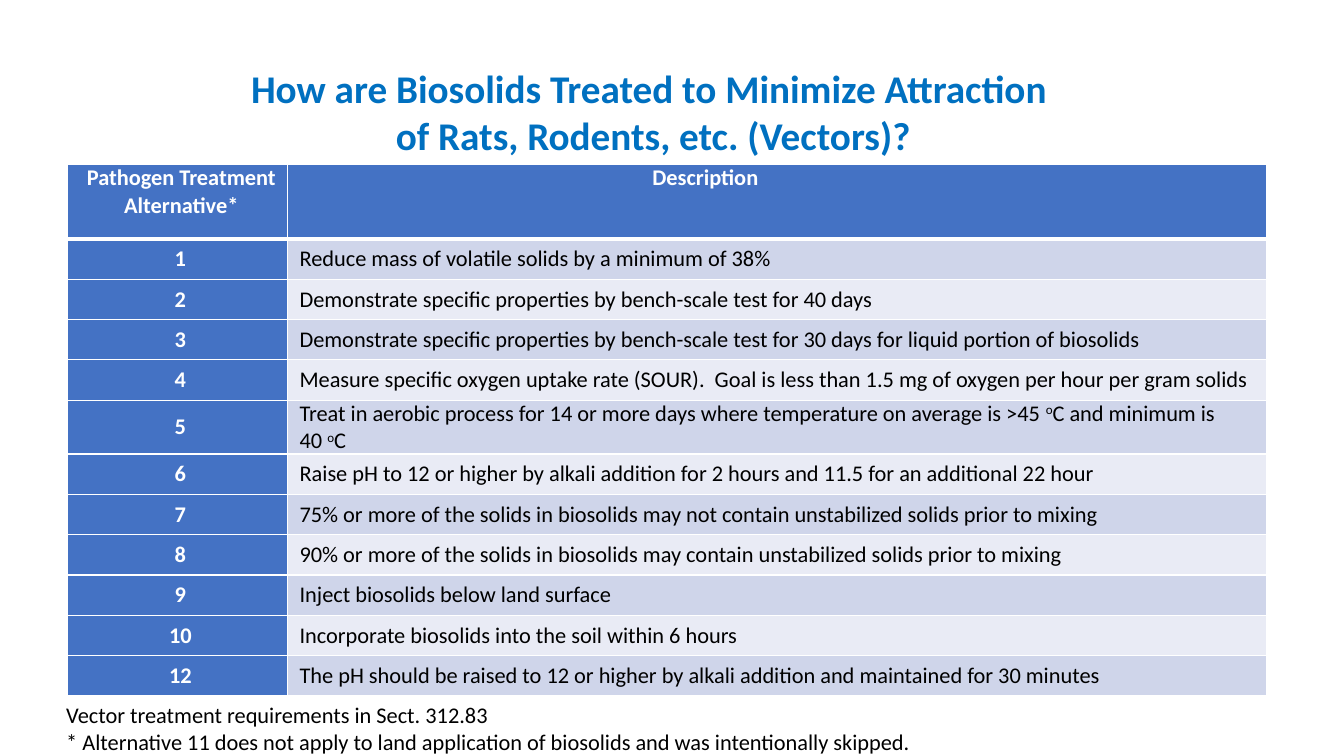
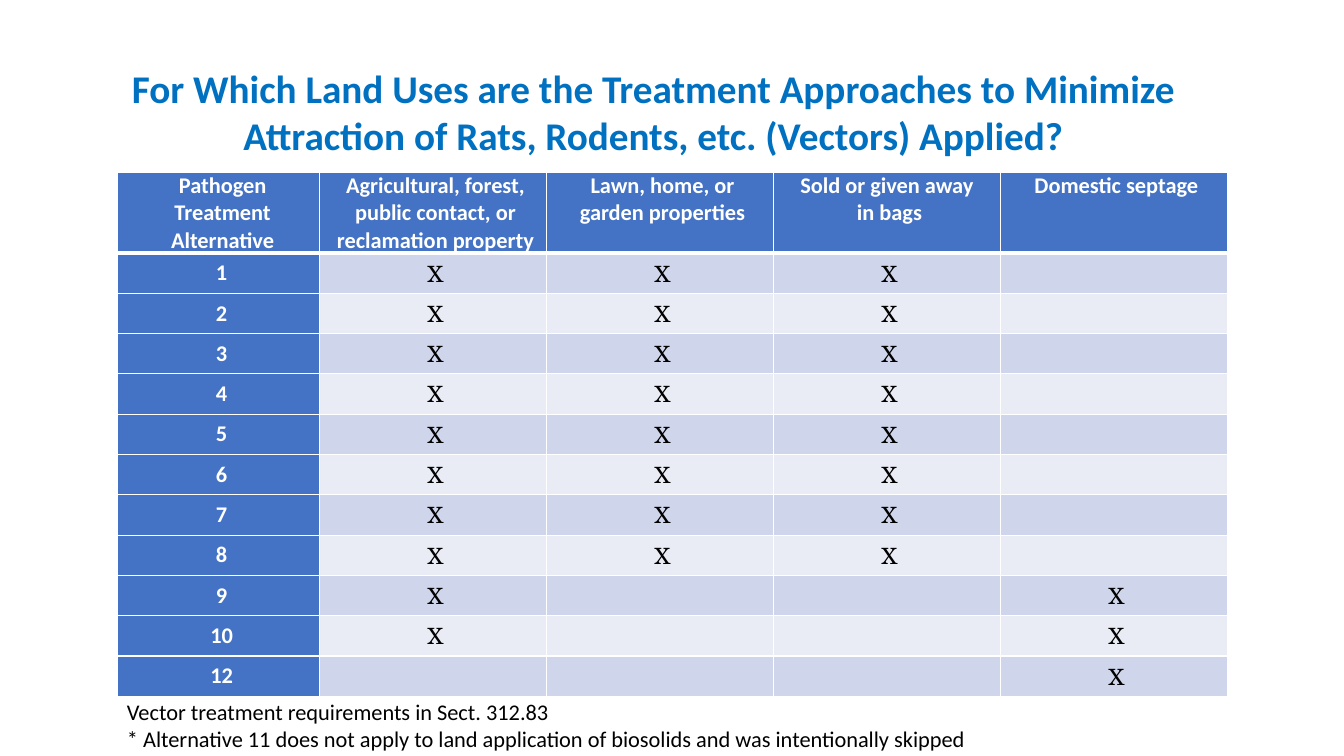
from dataclasses import dataclass

from lxml.etree import SubElement
from pptx import Presentation
from pptx.dml.color import RGBColor
from pptx.enum.text import MSO_ANCHOR, MSO_AUTO_SIZE, PP_ALIGN
from pptx.oxml.ns import qn
from pptx.slide import Slide
from pptx.table import _Cell
from pptx.text.text import TextFrame
from pptx.util import Cm, Pt


# Theme
@dataclass(frozen=True)
class Theme:
    title: str = "0070C0"
    header: str = "4472C4"
    bands: tuple[str, str] = ("CFD5EA", "E9EBF5")
    light: str = "FFFFFF"
    dark: str = "000000"
    font: str = "Calibri"
    mark_font: str = "TeX Gyre Schola"
    title_size: int = 28
    body_size: int = 16
    thin_line: int = 1
    thick_line: int = 3


THEME = Theme()
TITLE_BOX = (2.64, 1.5, 27.64, 2.64)
NOTE_SIZE = (26.7, 1.63)
HEADER_HEIGHT, BODY_HEIGHT = 1.88, 11.18
CELL_INSET = 0.18
HEADER_INDENT, NUMBER_INDENT, BODY_INDENT = 0.2, 0.15, 0.13


@dataclass(frozen=True)
class TableSlide:
    title: str
    note: str
    headers: list[str]
    rows: list[list[str]]
    widths: list[float]
    table_at: tuple[float, float]
    note_at: tuple[float, float]
    body_font: str
    body_align: PP_ALIGN
    last_header_indent: float
    last_header_align: PP_ALIGN


# Content
ALTERNATIVES = [*range(1, 11), 12]
DESCRIPTIONS = [
    "Reduce mass of volatile solids by a minimum of 38%",
    "Demonstrate specific properties by bench-scale test for 40 days",
    "Demonstrate specific properties by bench-scale test for 30 days for liquid portion of biosolids",
    "Measure specific oxygen uptake rate (SOUR).  Goal is less than 1.5 mg of oxygen per hour per gram solids",
    "Treat in aerobic process for 14 or more days where temperature on average is >45 ^o^C and minimum is \v40 ^o^C",
    "Raise pH to 12 or higher by alkali addition for 2 hours and 11.5 for an additional 22 hour",
    "75% or more of the solids in biosolids may not contain unstabilized solids prior to mixing",
    "90% or more of the solids in biosolids may contain unstabilized solids prior to mixing",
    "Inject biosolids below land surface",
    "Incorporate biosolids into the soil within 6 hours",
    "The pH should be raised to 12 or higher by alkali addition and maintained for 30 minutes",
]
# Alternatives that apply to each land use, in column order
LAND_USES = [range(1, 11), range(1, 9), range(1, 9), range(9, 13)]
NOTE = ("Vector treatment requirements in Sect. 312.83\n"
        "* Alternative 11 does not apply to land application of biosolids and was intentionally skipped")

SLIDES = [
    TableSlide(
        title="How are Biosolids Treated to Minimize Attraction \vof Rats, Rodents, etc. (Vectors)?",
        note=NOTE + ".",
        headers=["Pathogen Treatment Alternative*", "Description"],
        rows=[[str(number), text] for number, text in zip(ALTERNATIVES, DESCRIPTIONS)],
        widths=[5.54, 24.69],
        table_at=(1.7, 4.14),
        note_at=(1.42, 17.55),
        body_font=THEME.font,
        body_align=PP_ALIGN.LEFT,
        last_header_indent=9.02,
        last_header_align=PP_ALIGN.LEFT,
    ),
    TableSlide(
        title="For Which Land Uses are the Treatment Approaches to Minimize "
              "Attraction of Rats, Rodents, etc. (Vectors) Applied?",
        note=NOTE,
        headers=["Pathogen Treatment Alternative",
                 "Agricultural, forest, public contact, or reclamation property",
                 "Lawn, home, or garden properties",
                 "Sold or given away \vin bags",
                 "Domestic septage"],
        rows=[[str(number), *("X" if number in use else "" for use in LAND_USES)]
              for number in ALTERNATIVES],
        widths=[5.08] + [5.72] * 4,
        table_at=(2.97, 4.34),
        note_at=(2.95, 17.48),
        body_font=THEME.mark_font,
        body_align=PP_ALIGN.CENTER,
        last_header_indent=BODY_INDENT,
        last_header_align=PP_ALIGN.CENTER,
    ),
]


# Text: \n starts a paragraph, \v breaks a line, ^...^ is superscript
def write_text(frame: TextFrame, text: str, *, size: int = THEME.body_size,
               color: str = THEME.dark, font: str = THEME.font, bold: bool = False,
               align: PP_ALIGN = PP_ALIGN.LEFT, indent: float = 0) -> None:
    frame.word_wrap = True
    for index, paragraph_text in enumerate(text.split("\n")):
        paragraph = frame.add_paragraph() if index else frame.paragraphs[0]
        paragraph.alignment = align
        properties = paragraph._p.get_or_add_pPr()
        properties.set("marL", str(Cm(indent)))
        properties.set("indent", "0")
        for part_index, part in enumerate(paragraph_text.split("^")):
            for line_index, line in enumerate(part.split("\v")):
                if line_index:
                    paragraph.add_line_break()
                run = paragraph.add_run()
                run.text = line
                run.font.size = Pt(size)
                run.font.name = font
                run.font.bold = bold
                run.font.color.rgb = RGBColor.from_string(color)
                if part_index % 2:
                    run._r.get_or_add_rPr().set("baseline", "30000")


def add_text_box(slide: Slide, box: tuple[float, ...], text: str, **text_format) -> None:
    shape = slide.shapes.add_textbox(*map(Cm, box))
    write_text(shape.text_frame, text, **text_format)
    shape.text_frame.auto_size = MSO_AUTO_SIZE.SHAPE_TO_FIT_TEXT


# Table
def format_cell(cell: _Cell, fill: str, top: int, bottom: int) -> None:
    cell.margin_left = cell.margin_right = Cm(CELL_INSET)
    cell.margin_top = cell.margin_bottom = 0
    properties = cell._tc.get_or_add_tcPr()
    edges = {"lnL": THEME.thin_line, "lnR": THEME.thin_line, "lnT": top, "lnB": bottom}
    for edge, width in edges.items():
        line = SubElement(properties, qn(f"a:{edge}"), w=str(Pt(width)))
        solid = SubElement(line, qn("a:solidFill"))
        SubElement(solid, qn("a:srgbClr"), val=THEME.light)
    cell.fill.solid()
    cell.fill.fore_color.rgb = RGBColor.from_string(fill)


def add_table(slide: Slide, content: TableSlide) -> None:
    row_count, column_count = len(content.rows) + 1, len(content.headers)
    left, top = content.table_at
    table = slide.shapes.add_table(
        row_count, column_count, Cm(left), Cm(top),
        Cm(sum(content.widths)), Cm(HEADER_HEIGHT + BODY_HEIGHT)).table
    table.first_row = table.horz_banding = False
    for column, width in zip(table.columns, content.widths):
        column.width = Cm(width)
    for row_index, texts in enumerate([content.headers, *content.rows]):
        is_header = row_index == 0
        table.rows[row_index].height = Cm(
            HEADER_HEIGHT if is_header else BODY_HEIGHT / len(content.rows))
        for column_index, text in enumerate(texts):
            cell = table.cell(row_index, column_index)
            is_strong = is_header or column_index == 0
            format_cell(
                cell,
                fill=THEME.header if is_strong else THEME.bands[(row_index - 1) % 2],
                top=THEME.thick_line if row_index == 1 else THEME.thin_line,
                bottom=THEME.thick_line if is_header else THEME.thin_line)
            cell.vertical_anchor = MSO_ANCHOR.TOP if is_header else MSO_ANCHOR.MIDDLE
            align, indent = PP_ALIGN.CENTER, BODY_INDENT
            if column_index == 0:
                indent = HEADER_INDENT if is_header else NUMBER_INDENT
            elif not is_header:
                align = content.body_align
            elif column_index == column_count - 1:
                align, indent = content.last_header_align, content.last_header_indent
            if text:
                write_text(cell.text_frame, text, bold=is_strong, align=align, indent=indent,
                           color=THEME.light if is_strong else THEME.dark,
                           font=THEME.font if is_strong else content.body_font)


# Slides
def main() -> None:
    presentation = Presentation()
    presentation.slide_width, presentation.slide_height = Cm(33.87), Cm(19.05)
    for content in SLIDES:
        slide = presentation.slides.add_slide(presentation.slide_layouts[6])
        add_text_box(slide, TITLE_BOX, content.title, size=THEME.title_size,
                     color=THEME.title, bold=True, align=PP_ALIGN.CENTER)
        add_table(slide, content)
        add_text_box(slide, content.note_at + NOTE_SIZE, content.note)
    presentation.save("out.pptx")


if __name__ == "__main__":
    main()
